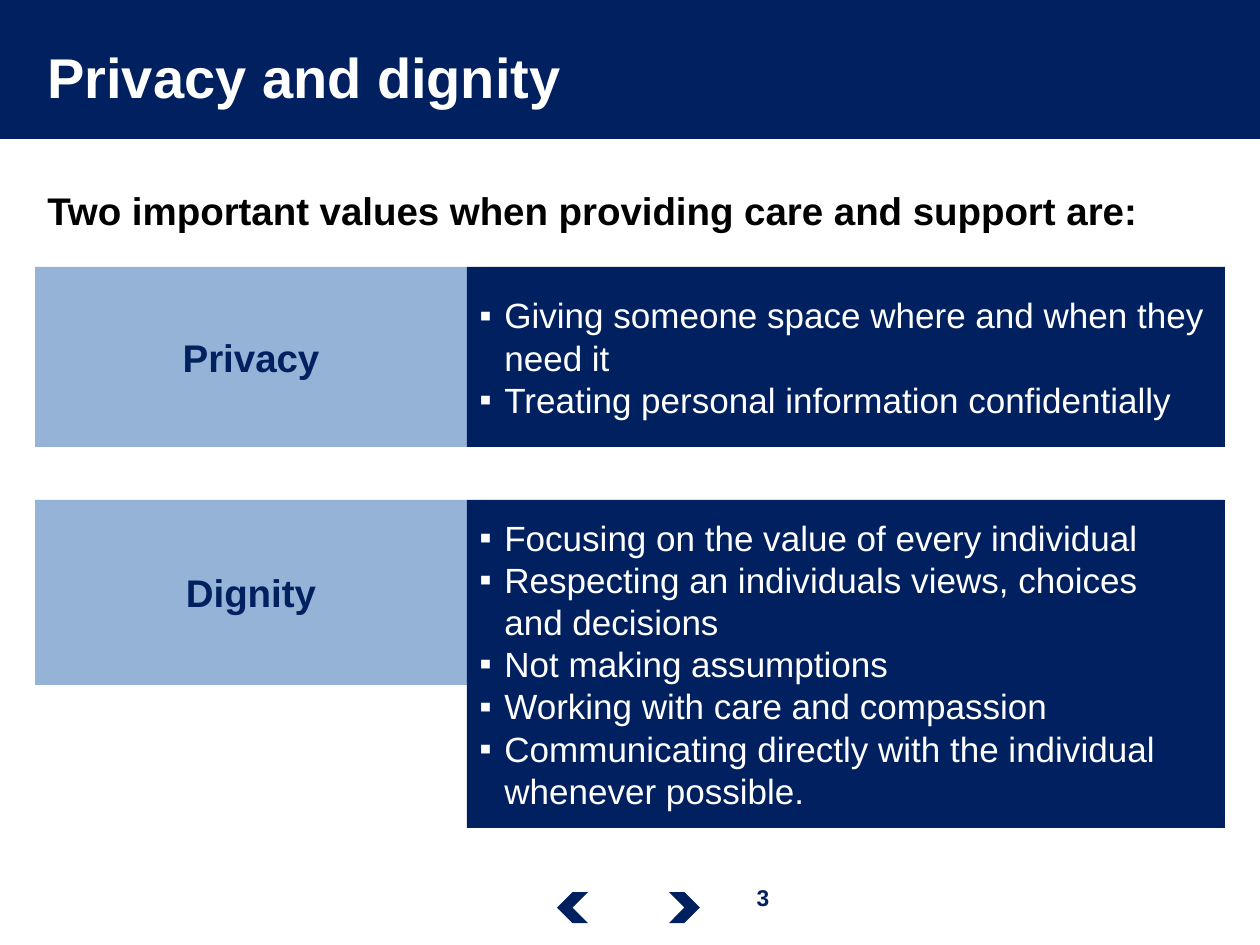
"""Build the slide on privacy and dignity as two care values."""
from lxml import etree
from pptx import Presentation
from pptx.dml.color import RGBColor
from pptx.enum.shapes import MSO_SHAPE
from pptx.enum.text import MSO_ANCHOR, PP_ALIGN
from pptx.oxml.ns import qn
from pptx.util import Pt

NAVY = RGBColor(0x00, 0x20, 0x60)
PALE = RGBColor(0x95, 0xB3, 0xD7)
WHITE = RGBColor(0xFF, 0xFF, 0xFF)
BLACK = RGBColor(0x00, 0x00, 0x00)
RECT, ARROW = MSO_SHAPE.RECTANGLE, MSO_SHAPE.CHEVRON
LEFT, CENTER = PP_ALIGN.LEFT, PP_ALIGN.CENTER
TOP, MIDDLE = MSO_ANCHOR.TOP, MSO_ANCHOR.MIDDLE
FONT = "Arial"

TITLE = "Privacy and dignity"
INTRO = "Two important values when providing care and support are:"
PAGE = "3"
# Each value: name, top, height of its label, height of its list, points
VALUES = [
    ("Privacy", 267, 180, 180, [
        "Giving someone space where and when they need it",
        "Treating personal information confidentially",
    ]),
    ("Dignity", 500, 185, 328, [
        "Focusing on the value of every individual",
        "Respecting an individuals views, choices \vand decisions",
        "Not making assumptions",
        "Working with care and compassion",
        "Communicating directly with the individual whenever possible.",
    ]),
]
ARROWS = [(669, 0), (557, 180)]
EDGE, SPLIT, END = 35, 467, 1225
INDENT = 25


def px(n):
    return round(n * 914400 / 126)


def write(shape, lines, size, color, bold=True, align=LEFT, anchor=TOP, mark=None):
    frame = shape.text_frame
    frame.word_wrap = True
    frame.vertical_anchor = anchor
    frame.text = "\n".join(lines)
    for para in frame.paragraphs:
        para.alignment = align
        if mark:
            add_mark(para, mark)
        for run in para.runs:
            font = run.font
            font.name, font.size, font.bold = FONT, Pt(size), bold
            font.color.rgb = color


def add_mark(para, mark):
    props = para._p.get_or_add_pPr()
    props.set("marL", str(px(INDENT)))
    props.set("indent", str(-px(INDENT)))
    tint = etree.SubElement(props, qn("a:buClr"))
    etree.SubElement(tint, qn("a:srgbClr")).set("val", str(WHITE))
    etree.SubElement(props, qn("a:buFont")).set("typeface", FONT)
    etree.SubElement(props, qn("a:buChar")).set("char", mark)


def block(slide, kind, box, fill):
    shape = slide.shapes.add_shape(kind, *map(px, box))
    shape.shadow.inherit = False
    shape.fill.solid()
    shape.fill.fore_color.rgb = fill
    shape.line.fill.background()
    return shape


def label(slide, box, text, size, color, **style):
    shape = slide.shapes.add_textbox(*map(px, box))
    write(shape, [text], size, color, **style)


def main():
    deck = Presentation()
    deck.slide_width, deck.slide_height = px(1260), px(945)
    slide = deck.slides.add_slide(deck.slide_layouts[6])

    block(slide, RECT, (-2, 0, 1262, 139), NAVY)
    label(slide, (718, 878, 90, 40), PAGE, 13, NAVY, align=CENTER)
    for left, turn in ARROWS:
        block(slide, ARROW, (left, 892, 31, 31), NAVY).rotation = turn
    label(slide, (EDGE, 13, 995, 127), TITLE, 32, WHITE, anchor=MIDDLE)
    label(slide, (EDGE, 181, 1194, 60), INTRO, 22, BLACK)

    for name, top, short, tall, points in VALUES:
        head = block(slide, RECT, (EDGE, top, SPLIT - EDGE, short), PALE)
        write(head, [name], 22, NAVY, align=CENTER, anchor=MIDDLE)
        body = block(slide, RECT, (SPLIT, top, END - SPLIT, tall), NAVY)
        write(body, points, 20, WHITE, bold=False, anchor=MIDDLE, mark="▪")

    deck.save("out.pptx")


if __name__ == "__main__":
    main()
